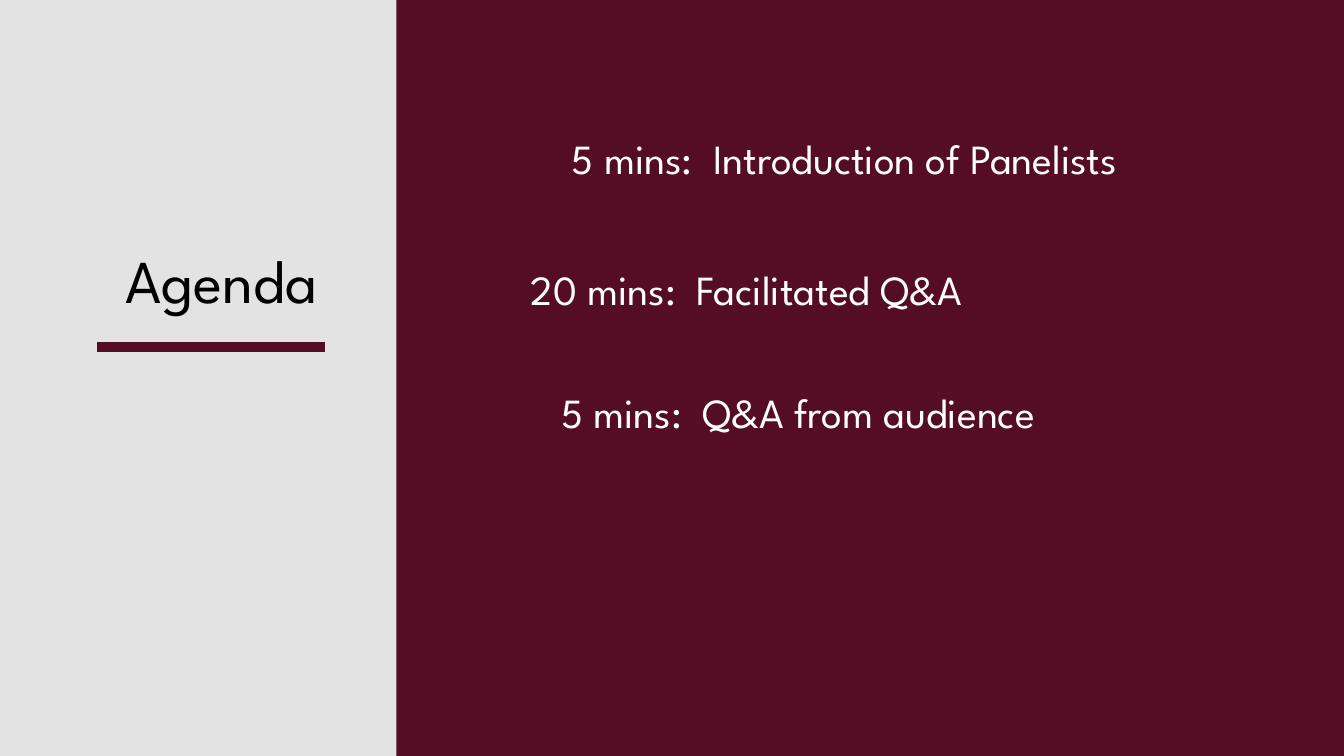
from dataclasses import dataclass

import pptx
import pptx.dml.color
import pptx.enum.shapes
import pptx.enum.text
import pptx.oxml
import pptx.shapes.base
import pptx.slide
import pptx.text.text
import pptx.util

Inches = pptx.util.Inches


@dataclass(frozen=True)
class Theme:
    font: str = "League Spartan"
    burgundy: str = "540D25"
    gray: str = "E3E3E3"
    white: str = "FFFFFF"
    black: str = "000000"
    title_size: float = 65.2
    item_size: float = 44.4
    line_ratio: float = 1.4
    rule_width: float = 10.5


@dataclass(frozen=True)
class AgendaItem:
    text: str
    left: float
    top: float
    width: float
    height: float = 0.84


THEME = Theme()
AGENDA = (
    AgendaItem("5 mins:  Introduction of Panelists", 7.41, 1.86, 10.32),
    AgendaItem("20 mins:  Facilitated Q&A", 7.03, 3.81, 8.16),
    AgendaItem("5 mins:  Q&A from audience", 7.41, 5.64, 8.94),
)


def rgb(value: str) -> pptx.dml.color.RGBColor:
    return pptx.dml.color.RGBColor.from_string(value)


def write_text(tf: pptx.text.text.TextFrame, text: str, *, size: float, color: str) -> None:
    tf.margin_left = tf.margin_top = tf.margin_right = tf.margin_bottom = 0
    tf.word_wrap = True
    tf.auto_size = pptx.enum.text.MSO_AUTO_SIZE.SHAPE_TO_FIT_TEXT
    tf.vertical_anchor = pptx.enum.text.MSO_ANCHOR.TOP
    p = tf.paragraphs[0]
    p.alignment = pptx.enum.text.PP_ALIGN.CENTER
    p.line_spacing = pptx.util.Pt(size * THEME.line_ratio)
    p.space_before = pptx.util.Pt(0)
    r = p.add_run()
    r.text = text
    r.font.name = THEME.font
    r.font.size = pptx.util.Pt(size)
    r.font.color.rgb = rgb(color)


def add_title(s: pptx.slide.Slide) -> pptx.shapes.base.BaseShape:
    title = s.shapes.title
    title.left, title.top = Inches(1.44), Inches(3.43)
    title.width, title.height = Inches(3.71), Inches(1.23)
    write_text(title.text_frame, "Agenda", size=THEME.title_size, color=THEME.black)
    return title


def add_side_panel(s: pptx.slide.Slide, title: pptx.shapes.base.BaseShape) -> None:
    sp = s.shapes.add_shape(
        pptx.enum.shapes.MSO_SHAPE.RECTANGLE, 0, 0, Inches(5.9), Inches(11.25)
    )
    sp.shadow.inherit = False
    sp.fill.solid()
    sp.fill.fore_color.rgb = rgb(THEME.gray)
    sp.line.fill.background()
    title.element.addprevious(sp.element)


def add_title_rule(s: pptx.slide.Slide) -> None:
    rule = s.shapes.add_connector(
        pptx.enum.shapes.MSO_CONNECTOR.STRAIGHT,
        Inches(1.44), Inches(5.16), Inches(4.84), Inches(5.16),
    )
    rule.line.color.rgb = rgb(THEME.burgundy)
    rule.line.width = pptx.util.Pt(THEME.rule_width)
    rule.element.spPr.append(pptx.oxml.parse_xml(
        '<a:effectLst xmlns:a="http://schemas.openxmlformats.org/drawingml/2006/main"/>'
    ))


def add_agenda_item(s: pptx.slide.Slide, item: AgendaItem) -> None:
    sp = s.shapes.add_textbox(
        Inches(item.left), Inches(item.top), Inches(item.width), Inches(item.height)
    )
    write_text(sp.text_frame, item.text, size=THEME.item_size, color=THEME.white)


def main() -> None:
    prs = pptx.Presentation()
    prs.slide_width, prs.slide_height = Inches(20), Inches(11.25)
    s = prs.slides.add_slide(prs.slide_layouts.get_by_name("Title Only"))
    s.background.fill.solid()
    s.background.fill.fore_color.rgb = rgb(THEME.burgundy)
    title = add_title(s)
    add_side_panel(s, title)
    add_title_rule(s)
    for item in AGENDA:
        add_agenda_item(s, item)
    prs.save("out.pptx")


if __name__ == "__main__":
    main()
